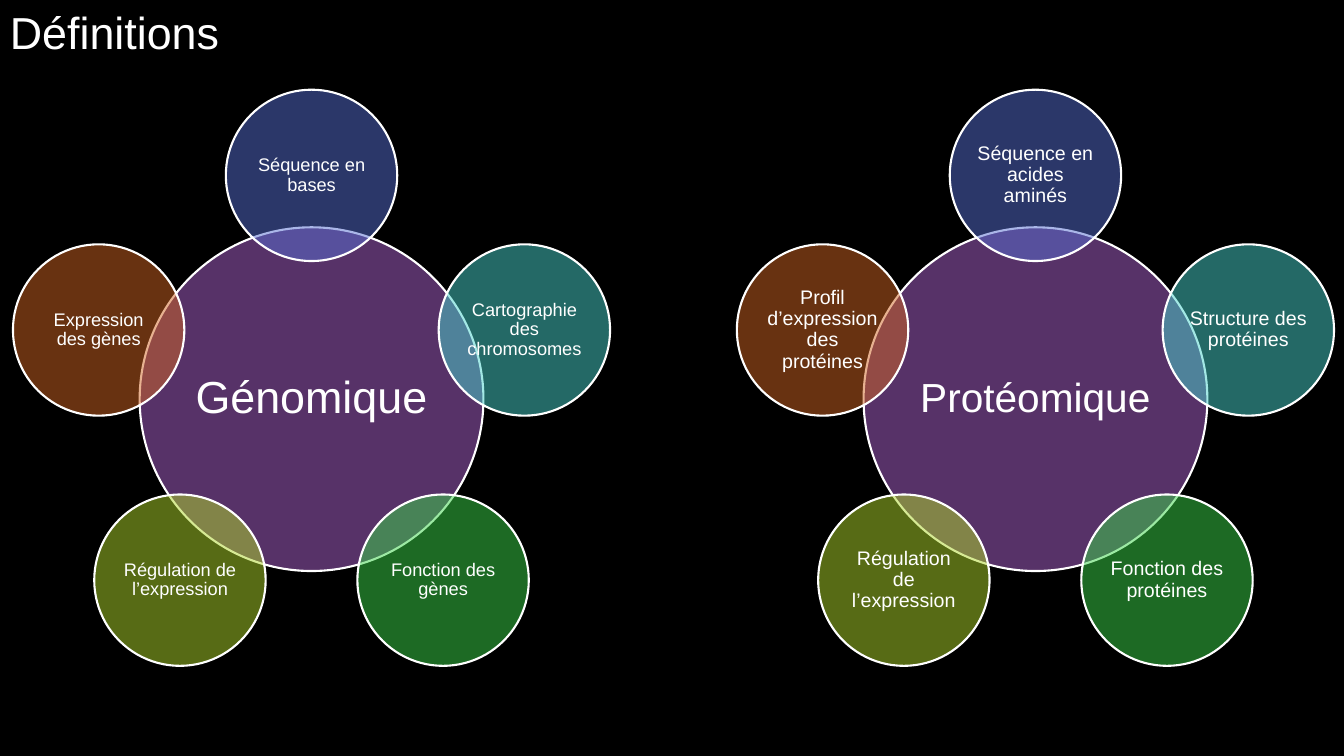
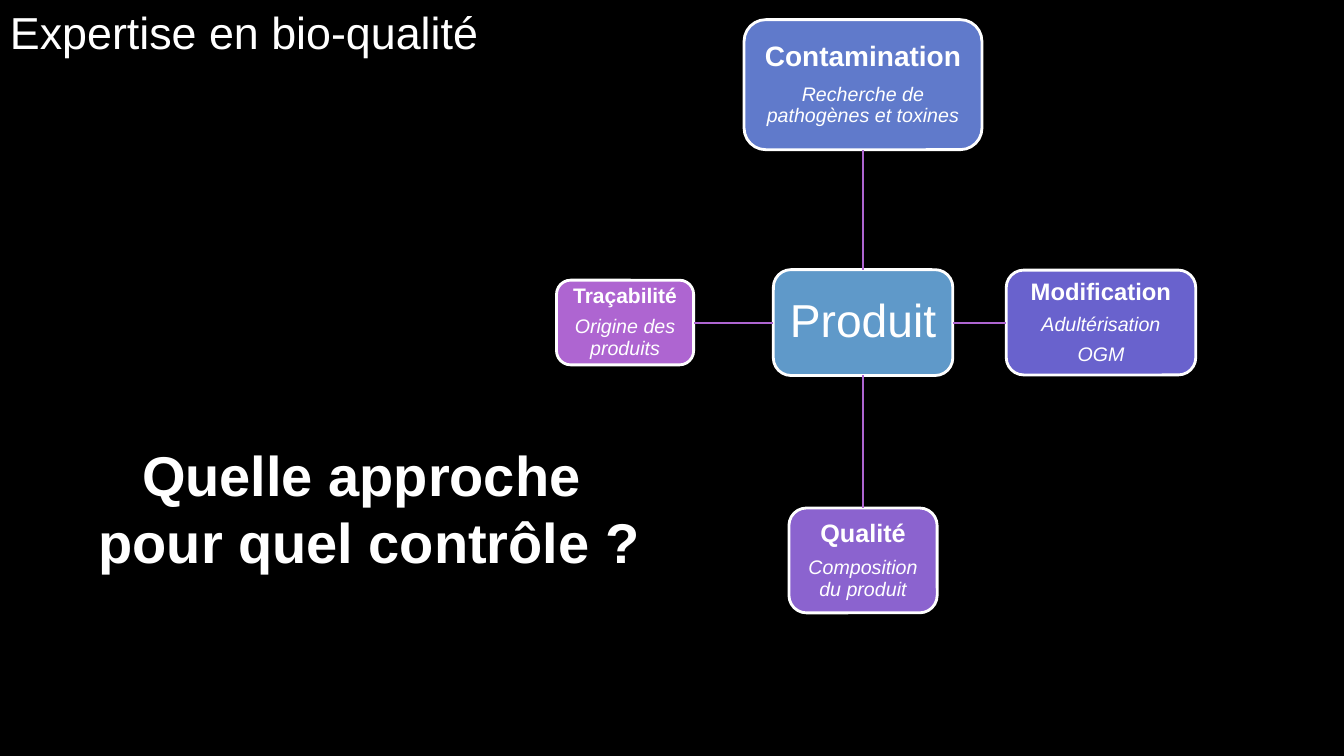
from math import cos, radians, sin

from lxml import etree
from pptx import Presentation
from pptx.dml.color import RGBColor
from pptx.enum.shapes import MSO_CONNECTOR, MSO_SHAPE
from pptx.enum.text import MSO_ANCHOR, MSO_AUTO_SIZE, PP_ALIGN
from pptx.oxml.ns import qn
from pptx.util import Inches, Pt

CIRCLE, CARD = MSO_SHAPE.OVAL, MSO_SHAPE.ROUNDED_RECTANGLE
STRAIGHT = MSO_CONNECTOR.STRAIGHT
LEFT, CENTER, MIDDLE = PP_ALIGN.LEFT, PP_ALIGN.CENTER, MSO_ANCHOR.MIDDLE
FIT_SHAPE = MSO_AUTO_SIZE.SHAPE_TO_FIT_TEXT

BLACK = RGBColor(0x00, 0x00, 0x00)
WHITE = RGBColor(0xFF, 0xFF, 0xFF)
PURPLE = RGBColor(0xAE, 0x65, 0xD1)
BLUE = RGBColor(0x57, 0x6E, 0xD2)
TURQUOISE = RGBColor(0x49, 0xD3, 0xCD)
GREEN = RGBColor(0x3A, 0xD4, 0x48)
LIME = RGBColor(0xAE, 0xD6, 0x2A)
ORANGE = RGBColor(0xD0, 0x64, 0x23)
SKY = RGBColor(0x5F, 0x99, 0xC9)
PERIWINKLE = RGBColor(0x60, 0x7A, 0xCB)
INDIGO = RGBColor(0x69, 0x62, 0xCD)
VIOLET = RGBColor(0x8B, 0x63, 0xCF)

FONT = "Arial"
PLAIN = {"bold": False, "italic": False}
HEADING = {"bold": True, "italic": False}
DETAIL = {"bold": False, "italic": True}
TOP, LEFT_SIDE, BOTTOM, RIGHT_SIDE = range(4)  # connection sites of a card


class Deck:
    """Shared style and the slide being filled."""

    def __init__(self):
        self.presentation = Presentation()
        self.presentation.slide_width = Inches(13.33)
        self.presentation.slide_height = Inches(7.5)
        self.slide = None

    def new_slide(self, title, title_width):
        self.slide = self.presentation.slides.add_slide(self.presentation.slide_layouts[6])
        background = self.slide.background.fill
        background.solid()
        background.fore_color.rgb = BLACK
        self.label((0, 0, title_width, 0.64), [(title, 32, PLAIN)], LEFT)

    def fill_text(self, frame, lines, align, spacing=None):
        """Fill a frame with (text, size, style) lines."""
        for index, (text, size, style) in enumerate(lines):
            paragraph = frame.add_paragraph() if index else frame.paragraphs[0]
            paragraph.alignment = align
            if spacing:
                paragraph.line_spacing = spacing
                paragraph.space_after = Pt(round(0.4 * size, 1))
            run = paragraph.add_run()
            run.text = text
            run.font.color.rgb = WHITE
            for name, value in {"name": FONT, "size": Pt(size), **style}.items():
                setattr(run.font, name, value)

    def label(self, place, lines, align):
        frame = self.slide.shapes.add_textbox(*map(Inches, place)).text_frame
        frame.word_wrap = False
        frame.auto_size = FIT_SHAPE
        self.fill_text(frame, lines, align)

    def node(self, preset, center, size, color, lines, inset, border):
        """Draw a white-edged shape around its center, with text inside."""
        (x, y), (width, height) = center, size
        place = (x - width / 2, y - height / 2, width, height)
        shape = self.slide.shapes.add_shape(preset, *map(Inches, place))
        shape.shadow.inherit = False
        shape.fill.solid()
        shape.fill.fore_color.rgb = color
        shape.line.color.rgb = WHITE
        shape.line.width = Pt(border)
        frame = shape.text_frame
        margins = dict.fromkeys(
            ("margin_left", "margin_top", "margin_right", "margin_bottom"), Inches(inset))
        for name, value in {"word_wrap": True, "vertical_anchor": MIDDLE, **margins}.items():
            setattr(frame, name, value)
        self.fill_text(frame, lines, CENTER, 0.9)
        return shape

    def circle(self, center, diameter, color, text, size, inset):
        """Draw a half-transparent circle."""
        shape = self.node(CIRCLE, center, (diameter, diameter), color,
                          [(text, size, PLAIN)], inset, 1.5)
        tint = shape._element.spPr.find(qn("a:solidFill"))[0]
        etree.SubElement(tint, qn("a:alpha"), val="50000")

    def card(self, center, size, color, lines, inset):
        return self.node(CARD, center, size, color, lines, inset, 2)

    def link(self, start, start_site, end, end_site):
        line = self.slide.shapes.add_connector(STRAIGHT, 0, 0, 0, 0)
        line.begin_connect(start, start_site)
        line.end_connect(end, end_site)
        line.line.color.rgb = PURPLE
        line.line.width = Pt(1.5)
        etree.SubElement(line._element.spPr, qn("a:effectLst"))

    def wheel(self, center, hub, hub_size, topics, topic_size):
        """Draw a hub with topics evenly spread clockwise from the top."""
        self.circle(center, 3.41, PURPLE, hub, hub_size, 0.04)
        colors = (BLUE, TURQUOISE, GREEN, LIME, ORANGE)
        orbit = 2.22
        for index, (topic, color) in enumerate(zip(topics, colors)):
            angle = radians(index * 360 / len(topics) - 90)
            spot = (center[0] + orbit * cos(angle), center[1] + orbit * sin(angle))
            self.circle(spot, 1.7, color, topic, topic_size, 0.02)


def definitions(deck):
    deck.new_slide("Définitions", 2.3)
    deck.wheel((3.09, 3.96), "Génomique", 32, (
        "Séquence en bases", "Cartographie des chromosomes", "Fonction des gènes",
        "Régulation de l’expression", "Expression des gènes"), 13)
    deck.wheel((10.27, 3.96), "Protéomique", 29, (
        "Séquence en acides aminés", "Structure des protéines", "Fonction des protéines",
        "Régulation de l’expression", "Profil d’expression des protéines"), 14)


def expertise(deck):
    deck.new_slide("Expertise en bio-qualité", 4.88)
    x, y, reach = 8.56, 3.2, 2.36
    product = deck.card((x, y), (1.78, 1.05), SKY, [("Produit", 33, PLAIN)], 0.09)
    controls = (
        (0, -1, (2.36, 1.29), PERIWINKLE, 0.06, TOP, BOTTOM,
         "Contamination", 20, ["Recherche de pathogènes et toxines"]),
        (1, 0, (1.88, 1.04), INDIGO, 0.05, RIGHT_SIDE, LEFT_SIDE,
         "Modification", 17, ["Adultérisation", "OGM"]),
        (0, 1, (1.47, 1.04), VIOLET, 0.05, BOTTOM, TOP,
         "Qualité", 18, ["Composition du produit"]),
        (-1, 0, (1.36, 0.84), PURPLE, 0.04, LEFT_SIDE, RIGHT_SIDE,
         "Traçabilité", 15, ["Origine des produits"]),
    )
    for dx, dy, size, color, inset, hub_site, card_site, heading, points, details in controls:
        lines = [(heading, points, HEADING)] + [(detail, 14, DETAIL) for detail in details]
        control = deck.card((x + dx * reach, y + dy * reach), size, color, lines, inset)
        deck.link(product, hub_site, control, card_site)
    deck.label((0.85, 4.32, 5.62, 1.45), [
        ("Quelle approche ", 40, HEADING), ("pour quel contrôle ?", 40, HEADING)], CENTER)


def main():
    deck = Deck()
    definitions(deck)
    expertise(deck)
    deck.presentation.save("out.pptx")


if __name__ == "__main__":
    main()
